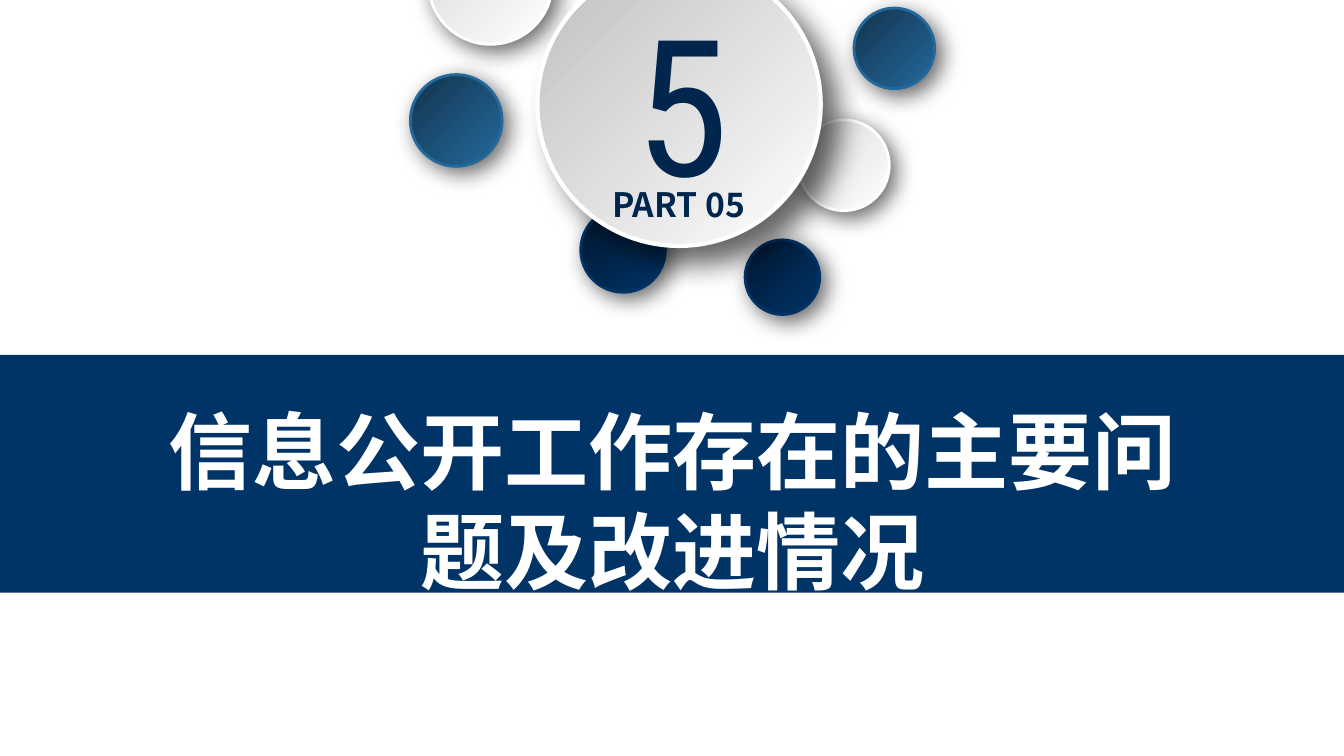
from lxml import etree
from pptx import Presentation, util as u
from pptx.dml.color import RGBColor
from pptx.enum import shapes, text
from pptx.oxml.ns import qn

WIDTH, HEIGHT = 13.33, 7.5
HAN_FONT, DIGIT_FONT = "Noto Sans CJK SC", "Roboto Condensed"
NAVY, DEEP_NAVY, INK = "003366", "001933", "00264D"
BLUE, DEEP_BLUE = "24699C", "12344E"
WHITE, SILVER, GREY = "FFFFFF", "D9D9D9", "BFBFBF"


def colour(value):
    return RGBColor.from_string(value)


def write(frame, content, font=HAN_FONT, size=24, fill=INK, bold=False, align=None):
    paragraph = frame.paragraphs[0]
    paragraph.alignment = align
    run = paragraph.add_run()
    run.text = content
    run.font.name, run.font.size, run.font.bold = font, u.Pt(size), bold
    run.font.color.rgb = colour(fill)
    east_asian = etree.SubElement(run.font._element, qn("a:ea"))
    east_asian.set("typeface", font)


def add_shadow(shape, blur, distance):
    """Cast a soft black shadow towards the lower right."""
    shape.shadow.inherit = False
    effects = shape._element.spPr.find(qn("a:effectLst"))
    shadow = etree.SubElement(effects, qn("a:outerShdw"), {
        "blurRad": str(u.Pt(blur)), "dist": str(u.Pt(distance)),
        "dir": str(45 * 60000), "algn": "tl", "rotWithShape": "0"})
    black = etree.SubElement(shadow, qn("a:srgbClr"), val="000000")
    etree.SubElement(black, qn("a:alpha"), val="60000")


class SectionSlide:
    """Holds the slide; positions and sizes are shares of its size."""

    def __init__(self, presentation):
        self.width, self.height = presentation.slide_width, presentation.slide_height
        self.slide = presentation.slides.add_slide(presentation.slide_layouts[6])

    def box(self, left, top, width, height):
        return (round(left * self.width), round(top * self.height),
                round(width * self.width), round(height * self.height))

    def band(self, top, height, fill):
        shape = self.slide.shapes.add_shape(
            shapes.MSO_SHAPE.RECTANGLE, *self.box(0, top, 1, height))
        shape.shadow.inherit = False
        shape.fill.solid()
        shape.fill.fore_color.rgb = colour(fill)
        shape.line.fill.background()

    def disc(self, left, top, diameter, light, dark, rim=2, blur=16, distance=6):
        """Draw a shaded circle; the diameter is a share of the width."""
        shape = self.slide.shapes.add_shape(
            shapes.MSO_SHAPE.OVAL,
            *self.box(left, top, diameter, diameter * self.width / self.height))
        shape.fill.gradient()
        shape.fill.gradient_angle = 135
        for stop, value in zip(shape.fill.gradient_stops, (light, dark)):
            stop.color.rgb = colour(value)
        shape.line.color.rgb = colour(light)
        shape.line.width = u.Pt(rim)
        add_shadow(shape, blur, distance)

    def label(self, left, top, width, height, content, wrap=True, **style):
        frame = self.slide.shapes.add_textbox(
            *self.box(left, top, width, height)).text_frame
        frame.word_wrap = wrap
        frame.auto_size = text.MSO_AUTO_SIZE.SHAPE_TO_FIT_TEXT
        write(frame, content, **style)


def main():
    presentation = Presentation()
    presentation.slide_width = u.Inches(WIDTH)
    presentation.slide_height = u.Inches(HEIGHT)
    section = SectionSlide(presentation)

    small_discs = [
        (7.39, 2.38, 0.74, NAVY, DEEP_NAVY),
        (4.07, 0.74, 0.91, BLUE, DEEP_BLUE),
        (5.76, 2.06, 0.84, NAVY, DEEP_NAVY),
        (8.47, 0.08, 0.80, BLUE, DEEP_BLUE),
        (4.25, -0.79, 1.23, WHITE, SILVER),
        (7.92, 1.19, 0.90, WHITE, SILVER),
    ]
    for left, top, diameter, light, dark in small_discs:
        section.disc(left / WIDTH, top / HEIGHT, diameter / WIDTH, light, dark)

    center = text.PP_ALIGN.CENTER
    section.band(3.52 / HEIGHT, 2.36 / HEIGHT, NAVY)
    section.label(1.56 / WIDTH, 3.91 / HEIGHT, 10.22 / WIDTH, 2.12 / HEIGHT,
                  "信息公开工作存在的主要问题及改进情况",
                  size=60, fill=WHITE, bold=True, align=center)
    section.disc(5.33 / WIDTH, -0.37 / HEIGHT, 2.81 / WIDTH, WHITE, GREY,
                 rim=3, blur=20, distance=16)
    section.label(6.2 / WIDTH, -0.19 / HEIGHT, 1.07 / WIDTH, 2.39 / HEIGHT, "5",
                  wrap=False, font=DIGIT_FONT, size=136)
    section.label(5.78 / WIDTH, 1.78 / HEIGHT, 1.9 / WIDTH, 0.5 / HEIGHT, "PART 05",
                  bold=True, align=center)

    presentation.save("out.pptx")


if __name__ == "__main__":
    main()
